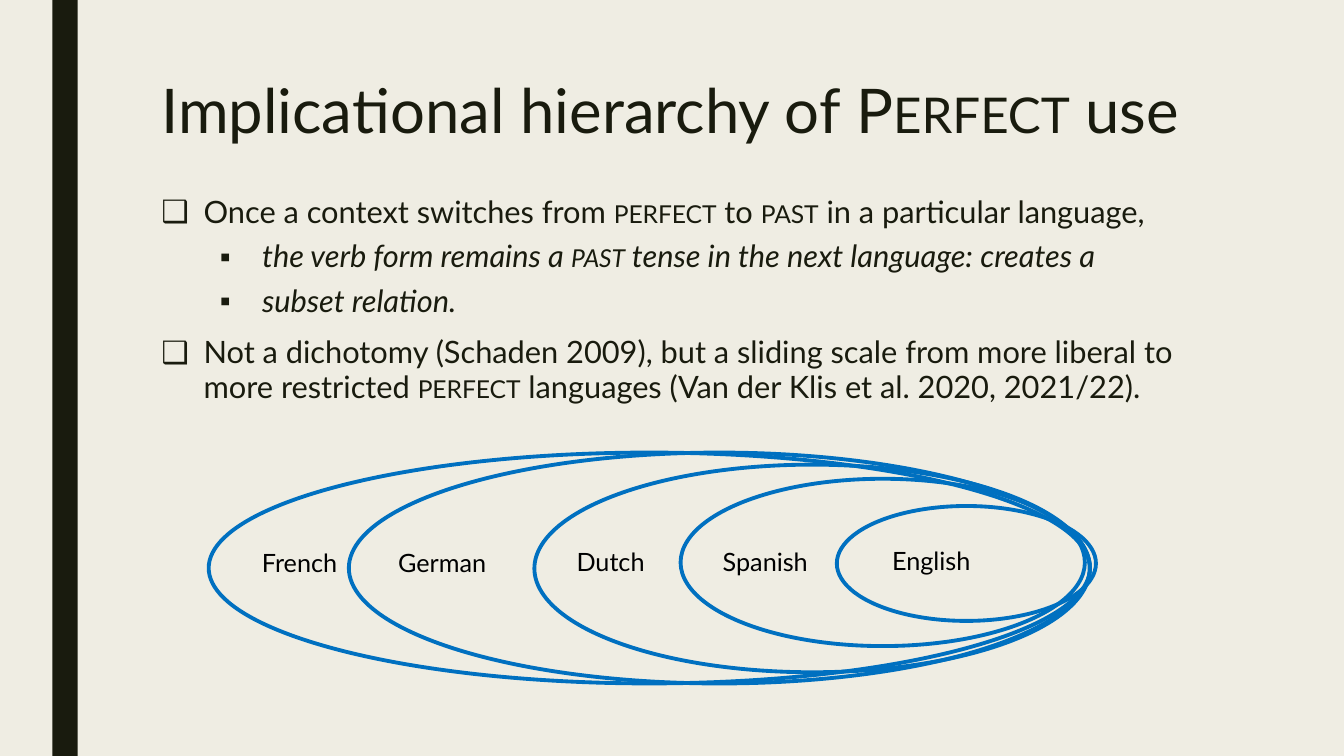
import pptx
import pptx.util
import pptx.dml.color
import pptx.enum.shapes
import pptx.enum.text
import pptx.oxml.ns
import lxml.etree

Inches = pptx.util.Inches
Pt = pptx.util.Pt
RGBColor = pptx.dml.color.RGBColor

PAPER = RGBColor(0xEF, 0xED, 0xE3)
INK = RGBColor(0x19, 0x1B, 0x0E)
BLUE = RGBColor(0x00, 0x70, 0xC0)
BLACK = RGBColor(0x00, 0x00, 0x00)
FACE = "Lato"

# Text between bars is set in small caps.
TITLE = "Implicational hierarchy of |Perfect| use"
POINTS = [
    (0, "Once a context switches from |perfect| to |past| in a particular language,"),
    (1, "the verb form remains a |past| tense in the next language: creates a"),
    (1, "subset relation."),
    (0, "Not a dichotomy (Schaden 2009), but a sliding scale from more liberal to "
        "more restricted |perfect| languages (Van der Klis et al. 2020, 2021/22)."),
]
# Per level: bullet, left margin, space before, italic
LEVELS = [("❑", 0.42, 10, False), ("▪", 1, 5, True)]
HANG = 0.42

# Name, ring (left, top, width, height) and label (left, top), from the diagram's corner
RINGS = [
    ("French", (0, 0, 8.74, 2.29), (0.43, 0.89)),
    ("German", (1.39, 0, 7.35, 2.29), (1.78, 0.89)),
    ("Dutch", (3.23, 0.12, 5.51, 2.06), (3.55, 0.88)),
    ("Spanish", (4.68, 0.26, 4.01, 1.66), (5, 0.88)),
    ("English", (6.23, 0.53, 2.57, 1.14), (6.68, 0.87)),
]


def assign(item, form):
    for name, value in form.items():
        setattr(item, name, value)


def place(shape, box):
    sides = ("left", "top", "width", "height")
    assign(shape, {side: Inches(size) for side, size in zip(sides, box)})


def write(para, text, size, color, italic=False):
    """Add runs to a paragraph, with small caps between bars."""
    for index, part in enumerate(text.split("|")):
        run = para.add_run()
        run.text = part
        assign(run.font, {"name": FACE, "size": Pt(size), "italic": italic})
        run.font.color.rgb = color
        if index % 2:
            run._r.get_or_add_rPr().set("cap", "small")


def set_frame(frame):
    assign(frame, {"word_wrap": True,
                   "auto_size": pptx.enum.text.MSO_AUTO_SIZE.NONE,
                   "vertical_anchor": pptx.enum.text.MSO_ANCHOR.TOP})


def add_bar(slide, box):
    bar = slide.shapes.add_shape(pptx.enum.shapes.MSO_SHAPE.RECTANGLE,
                                 *map(Inches, box))
    bar.shadow.inherit = False
    bar.fill.solid()
    bar.fill.fore_color.rgb = INK
    bar.line.fill.background()


def fill_title(slide, box):
    title = slide.shapes.title
    place(title, box)
    set_frame(title.text_frame)
    para = title.text_frame.paragraphs[0]
    assign(para, {"alignment": pptx.enum.text.PP_ALIGN.LEFT, "line_spacing": 0.89})
    write(para, TITLE, 44, INK)


def fill_body(slide, box):
    body = slide.placeholders[1]
    place(body, box)
    frame = body.text_frame
    set_frame(frame)
    for index, (level, text) in enumerate(POINTS):
        mark, margin, before, italic = LEVELS[level]
        para = frame.add_paragraph() if index else frame.paragraphs[0]
        assign(para, {"level": level, "line_spacing": 0.94,
                      "space_before": Pt(before), "space_after": Pt(2)})
        props = para._p.get_or_add_pPr()
        props.set("marL", str(Inches(margin)))
        props.set("indent", str(-Inches(HANG)))
        bullet = lxml.etree.SubElement(props, pptx.oxml.ns.qn("a:buChar"))
        bullet.set("char", mark)
        write(para, text, 22, INK, italic)


def add_rings(slide, left, top):
    """Draw the nested languages from the given top left corner."""
    for name, (x, y, width, height), (dx, dy) in RINGS:
        ring = slide.shapes.add_shape(
            pptx.enum.shapes.MSO_SHAPE.OVAL, Inches(left + x), Inches(top + y),
            Inches(width), Inches(height))
        ring.shadow.inherit = False
        ring.fill.background()
        ring.line.color.rgb = BLUE
        ring.line.width = Pt(2.75)
        label = slide.shapes.add_textbox(Inches(left + dx), Inches(top + dy),
                                         Inches(1.84), Inches(0.4))
        frame = label.text_frame
        assign(frame, {"word_wrap": True,
                       "auto_size": pptx.enum.text.MSO_AUTO_SIZE.SHAPE_TO_FIT_TEXT})
        write(frame.paragraphs[0], name, 18, BLACK)


def main():
    deck = pptx.Presentation()
    assign(deck, {"slide_width": Inches(13.33), "slide_height": Inches(7.5)})
    slide = deck.slides.add_slide(deck.slide_layouts[1])
    slide.background.fill.solid()
    slide.background.fill.fore_color.rgb = PAPER
    add_bar(slide, (0.52, 0, 0.25, 7.5))
    fill_title(slide, (1.5, 0.75, 10.5, 1.62))
    fill_body(slide, (1.5, 1.89, 10.5, 3.92))
    add_rings(slide, 2.07, 4.49)
    deck.save("out.pptx")


if __name__ == "__main__":
    main()
